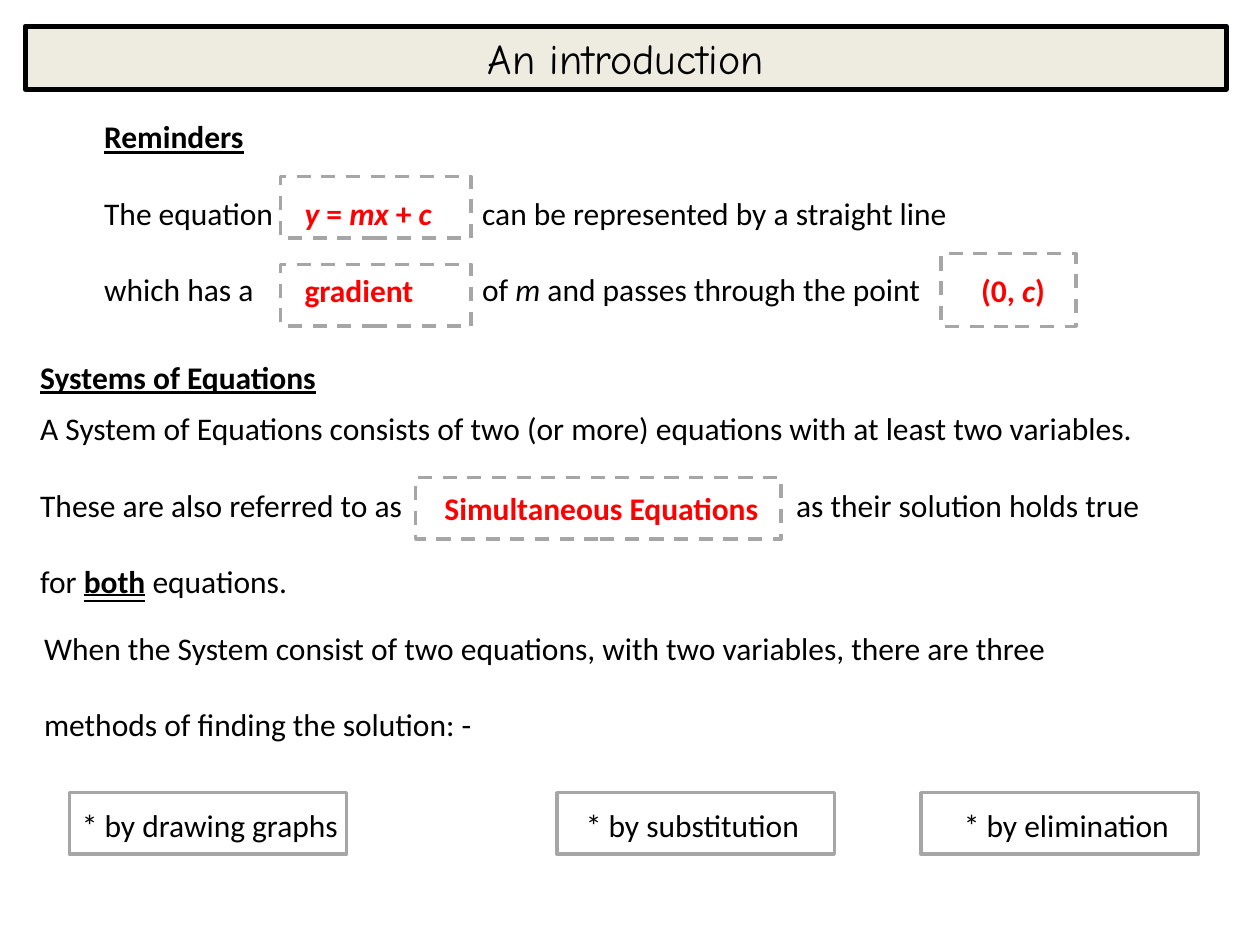
from dataclasses import dataclass

from lxml import etree
from pptx import Presentation
from pptx.dml.color import RGBColor
from pptx.enum import dml, shapes, text
from pptx.oxml.ns import qn
from pptx.util import Cm, Pt


@dataclass(frozen=True)
class Theme:
    ink: RGBColor = RGBColor(0x00, 0x00, 0x00)
    answer: RGBColor = RGBColor(0xFF, 0x00, 0x00)
    frame: RGBColor = RGBColor(0xA6, 0xA6, 0xA6)
    banner: RGBColor = RGBColor(0xEE, 0xEC, 0xE1)
    body_font: str = "Calibri"
    title_font: str = "Comic Neue"
    body_size: int = 18
    title_size: int = 24
    line_gap: int = 22


THEME = Theme()
UNDERLINES = {"u": True, "d": text.MSO_UNDERLINE.DOUBLE_LINE}


def write(frame, paragraphs, *, color=THEME.ink, size=THEME.body_size,
          font=THEME.body_font, bold=False, align=text.PP_ALIGN.LEFT, tabs=()):
    """Fill a frame; a paragraph is a list of (words, style) runs.

    Style letters: b bold, i italic, u underline, d double underline.
    Tabs are distances in cm.
    """
    for index, runs in enumerate(paragraphs):
        paragraph = frame.paragraphs[0] if index == 0 else frame.add_paragraph()
        paragraph.alignment = align
        if index:
            paragraph.space_before = Pt(THEME.line_gap)
        if tabs:
            stops = etree.SubElement(paragraph._p.get_or_add_pPr(), qn("a:tabLst"))
            for stop in tabs:
                etree.SubElement(stops, qn("a:tab"), pos=str(Cm(stop)), algn="l")
        for words, style in runs:
            run = paragraph.add_run()
            run.text = words
            run.font.name = font
            run.font.size = Pt(size)
            run.font.color.rgb = color
            run.font.bold = bold or "b" in style
            run.font.italic = "i" in style
            for letter, underline in UNDERLINES.items():
                if letter in style:
                    run.font.underline = underline


def add_text(slide, left, top, width, height, paragraphs, wrap=True, **style):
    box = slide.shapes.add_textbox(Cm(left), Cm(top), Cm(width), Cm(height))
    box.text_frame.word_wrap = wrap
    box.text_frame.auto_size = text.MSO_AUTO_SIZE.SHAPE_TO_FIT_TEXT
    write(box.text_frame, paragraphs, **style)


def add_frame(slide, left, top, width, height, *, fill=None, line=THEME.frame,
              weight=2, dashed=False):
    frame = slide.shapes.add_shape(shapes.MSO_SHAPE.RECTANGLE,
                                   Cm(left), Cm(top), Cm(width), Cm(height))
    frame.shadow.inherit = False
    if fill is None:
        frame.fill.background()
    else:
        frame.fill.solid()
        frame.fill.fore_color.rgb = fill
    frame.line.color.rgb = line
    frame.line.width = Pt(weight)
    if dashed:
        frame.line.dash_style = dml.MSO_LINE.DASH
    return frame


def add_title(slide, words):
    banner = add_frame(slide, 0.51, 0.53, 24.21, 1.27,
                       fill=THEME.banner, line=THEME.ink, weight=3)
    write(banner.text_frame, [[(words, "")]], size=THEME.title_size,
          font=THEME.title_font, align=text.PP_ALIGN.CENTER)


def add_answer(slide, position, gap, runs):
    """Red answer placed in the dashed gap it fills."""
    add_text(slide, *position, [runs], wrap=False, color=THEME.answer, bold=True)
    add_frame(slide, *gap, dashed=True)


def add_reminders(slide):
    add_text(slide, 1.85, 2.24, 19.61, 4.11, [
        [("Reminders", "bu")],
        [("The equation \tcan be represented by a straight line", "")],
        [("which has a \tof ", ""), ("m", "i"),
         (" and passes through the point", "")],
    ], tabs=[7.62])
    add_answer(slide, (5.89, 3.78, 3.12, 1.02), (5.66, 3.56, 3.84, 1.24),
               [("y", "i"), (" = ", ""), ("mx", "i"), (" + ", ""), ("c", "i")])
    add_answer(slide, (5.89, 5.33, 2.87, 1.02), (5.66, 5.33, 3.84, 1.24),
               [("gradient", "")])
    add_answer(slide, (19.53, 5.33, 1.8, 1.02), (18.97, 5.11, 2.72, 1.47),
               [("(0, ", ""), ("c", "i"), (")", "")])


def add_systems(slide):
    add_text(slide, 0.56, 7.09, 6.12, 1.02, [[("Systems of Equations", "bu")]],
             wrap=False)
    add_text(slide, 0.56, 8.13, 23.55, 4.11, [
        [("A System of Equations consists of two (or more) equations "
          "with at least two variables.", "")],
        [("These are also referred to as \tas their solution holds true", "")],
        [("for ", ""), ("both", "bd"), (" equations.", "")],
    ], tabs=[15.24])
    add_answer(slide, (8.71, 9.73, 7.04, 1.02), (8.38, 9.63, 7.37, 1.24),
               [("Simultaneous Equations", "")])


def add_methods(slide):
    add_text(slide, 0.64, 12.55, 21.72, 2.57, [
        [("When the System consist of two equations, with two variables, "
          "there are three", "")],
        [("methods of finding the solution: -", "")],
    ])
    add_text(slide, 1.4, 16.13, 23.19, 1.02, [
        [("* by drawing graphs\t* by substitution\t* by elimination", "")],
    ], tabs=[10.16, 17.78])
    for left in (1.4, 11.23, 18.57):
        add_frame(slide, left, 15.98, 5.59, 1.24)


def main():
    deck = Presentation()
    deck.slide_width, deck.slide_height = Cm(25.4), Cm(19.05)
    slide = deck.slides.add_slide(deck.slide_layouts[6])
    add_title(slide, "An introduction")
    add_reminders(slide)
    add_systems(slide)
    add_methods(slide)
    deck.save("out.pptx")


if __name__ == "__main__":
    main()
